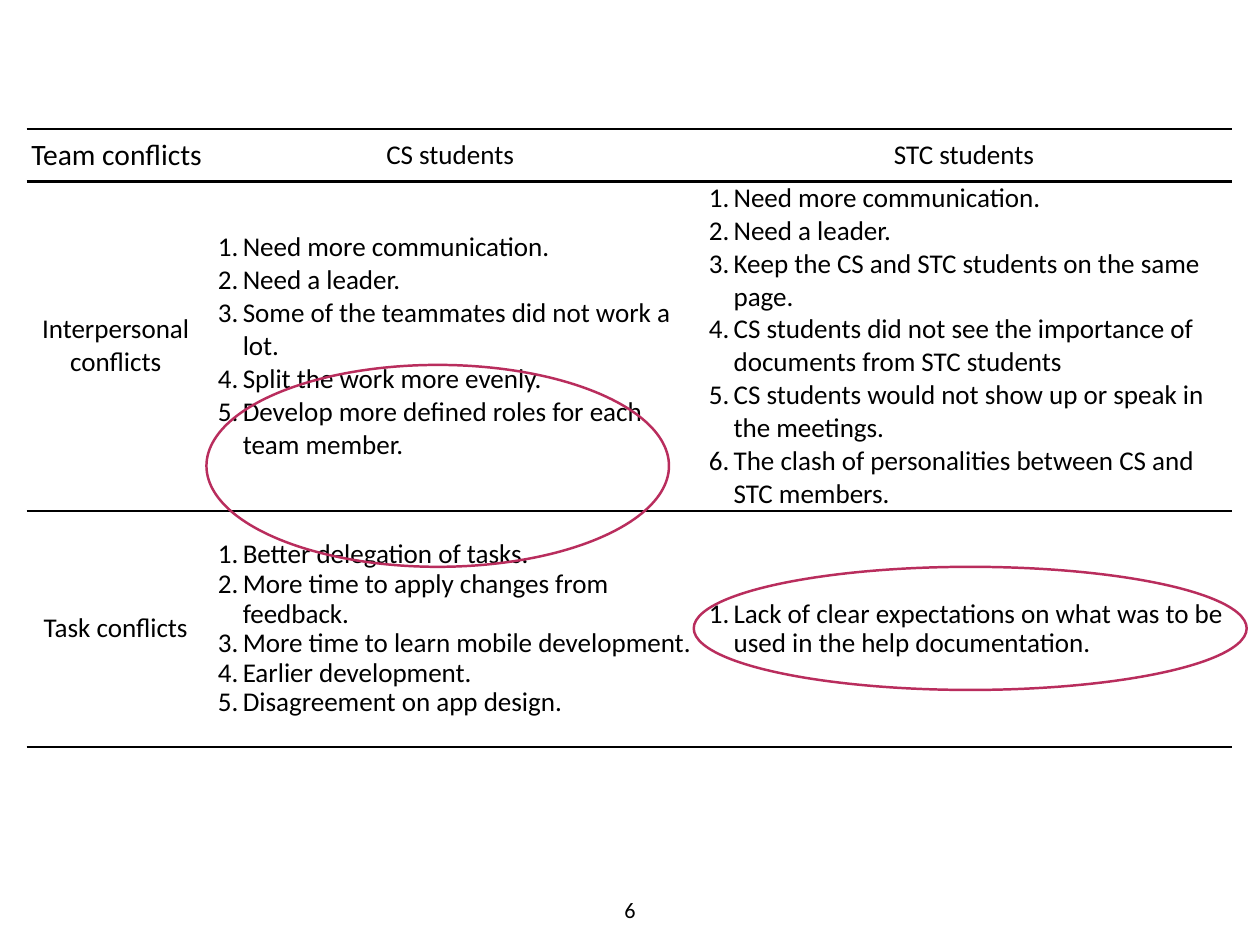
"""Build the slide comparing team conflicts of CS and STC students."""
from lxml import etree
from pptx import Presentation
from pptx.dml.color import RGBColor
from pptx.enum.shapes import MSO_SHAPE
from pptx.enum.text import MSO_ANCHOR, PP_ALIGN
from pptx.oxml.ns import qn
from pptx.util import Inches, Pt

OVAL = MSO_SHAPE.OVAL
MIDDLE, TOP = MSO_ANCHOR.MIDDLE, MSO_ANCHOR.TOP
CENTER, LEFT = PP_ALIGN.CENTER, PP_ALIGN.LEFT

COLUMN_WIDTHS = [2.01, 5.54, 6.06]
ROW_HEIGHTS = [0.59, 3.71, 2.67]
ROW_SPACINGS = [0.9, 1.0, 0.9]
CONFLICTS = [
    ["", "CS students", "STC students"],
    [
        "Interpersonal conflicts",
        ["Need more communication.",
         "Need a leader.",
         "Some of the teammates did not work a lot.",
         "Split the work more evenly.",
         "Develop more defined roles for each team member."],
        ["Need more communication.",
         "Need a leader.",
         "Keep the CS and STC students on the same page.",
         "CS students did not see the importance of documents from STC students",
         "CS students would not show up or speak in the meetings.",
         "The clash of personalities between CS and STC members."],
    ],
    [
        "Task conflicts",
        ["Better delegation of tasks.",
         "More time to apply changes from feedback.",
         "More time to learn mobile development.",
         "Earlier development.",
         "Disagreement on app design."],
        ["Lack of clear expectations on what was to be used in the help documentation."],
    ],
]


def color(value):
    """Turn a hex string into a colour."""
    return RGBColor.from_string(value)


class ConflictSlide:
    """Hold the style and the current slide."""

    font = "Calibri"
    ink = "000000"
    accent = "B92D5D"
    rule_width = 2

    def __init__(self, page):
        """Keep the slide to draw on."""
        self.page = page

    def format_paragraph(self, para, size, align, spacing=1.0):
        """Apply alignment, spacing and font to a paragraph."""
        para.alignment = align
        para.line_spacing = spacing
        for span in para.runs:
            span.font.name = self.font
            span.font.size = Pt(size)
            span.font.color.rgb = color(self.ink)

    def number_paragraph(self, para):
        """Number a paragraph with a hanging indent."""
        settings = para._p.get_or_add_pPr()
        settings.set("marL", str(Inches(0.43)))
        settings.set("indent", str(Inches(-0.28)))
        etree.SubElement(settings, qn("a:buFont"), typeface=self.font)
        etree.SubElement(settings, qn("a:buAutoNum"), type="arabicPeriod")

    def rule_cell(self, cell):
        """Draw horizontal rules around a cell and leave its sides open."""
        cell.fill.background()
        settings = cell._tc.get_or_add_tcPr()
        for position, side in enumerate(["lnL", "lnR", "lnT", "lnB"]):
            border = etree.Element(qn(f"a:{side}"), w=str(Pt(self.rule_width)))
            if side in ("lnT", "lnB"):
                fill = etree.SubElement(border, qn("a:solidFill"))
                etree.SubElement(fill, qn("a:srgbClr"), val=self.ink)
            else:
                etree.SubElement(border, qn("a:noFill"))
            settings.insert(position, border)

    def fill_cell(self, cell, content, margin, spacing):
        """Write a centred label or a numbered list into a cell."""
        numbered = isinstance(content, list)
        cell.vertical_anchor = MIDDLE
        cell.margin_left = cell.margin_right = Inches(margin)
        cell.margin_top = cell.margin_bottom = Inches(margin)
        cell.text_frame.text = "\n".join(content) if numbered else content
        for para in cell.text_frame.paragraphs:
            self.format_paragraph(para, 22, LEFT if numbered else CENTER, spacing)
            if numbered:
                self.number_paragraph(para)
        self.rule_cell(cell)

    def add_table(self, left, top, rows):
        """Add the ruled table of conflicts."""
        frame = self.page.shapes.add_table(
            len(rows), len(COLUMN_WIDTHS), Inches(left), Inches(top),
            Inches(sum(COLUMN_WIDTHS)), Inches(sum(ROW_HEIGHTS)))
        table = frame.table
        table.first_row = table.horz_banding = False
        for column, width in zip(table.columns, COLUMN_WIDTHS):
            column.width = Inches(width)
        for row_index, contents in enumerate(rows):
            table.rows[row_index].height = Inches(ROW_HEIGHTS[row_index])
            for column_index, content in enumerate(contents):
                margin = 0.06 if column_index == 0 else 0
                self.fill_cell(table.cell(row_index, column_index), content,
                               margin, ROW_SPACINGS[row_index])

    def add_label(self, text, area, size, margin=0, anchor=TOP):
        """Add one centred line of text."""
        box = self.page.shapes.add_textbox(*map(Inches, area))
        frame = box.text_frame
        frame.word_wrap = False
        frame.vertical_anchor = anchor
        frame.margin_left = frame.margin_right = Inches(margin)
        frame.margin_top = frame.margin_bottom = Inches(margin)
        frame.text = text
        self.format_paragraph(frame.paragraphs[0], size, CENTER)

    def add_ring(self, area):
        """Add an open oval that marks part of the table."""
        ring = self.page.shapes.add_shape(OVAL, *map(Inches, area))
        ring.shadow.inherit = False
        ring.fill.background()
        ring.line.color.rgb = color(self.accent)
        ring.line.width = Pt(self.rule_width)


def main():
    """Build and save the deck."""
    deck = Presentation()
    deck.slide_width, deck.slide_height = Inches(14.22), Inches(10.67)
    slide = ConflictSlide(deck.slides.add_slide(deck.slide_layouts[6]))
    slide.add_table(0.3, 1.46, CONFLICTS)
    slide.add_label("6", (6.92, 10.12, 0.38, 0.4), 18)
    for area in [(2.33, 4.12, 5.22, 2.28), (7.83, 6.4, 6.24, 1.39)]:
        slide.add_ring(area)
    slide.add_label("Team conflicts", (0.29, 1.49, 2.05, 0.5), 24, 0.06, MIDDLE)
    deck.save("out.pptx")


if __name__ == "__main__":
    main()
